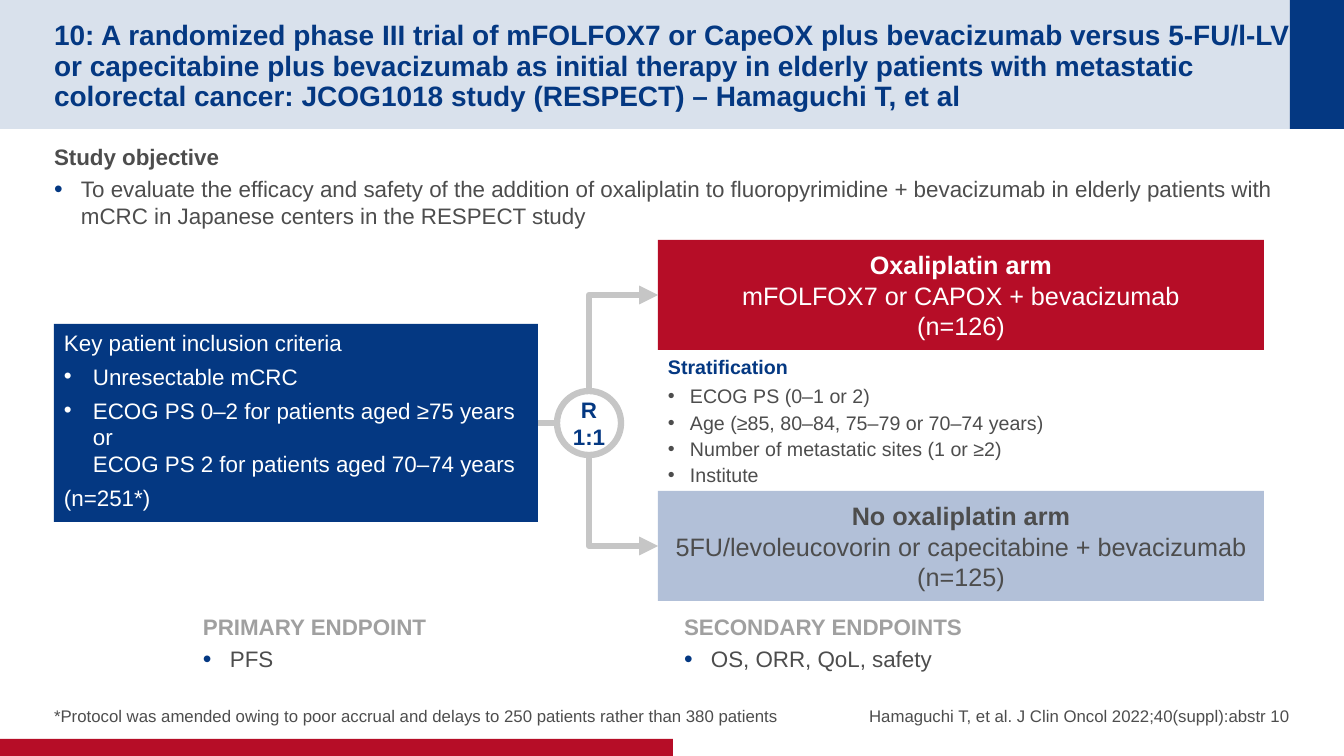
import pptx
import pptx.util
import pptx.dml.color
import pptx.enum.shapes
import pptx.enum.text
import pptx.oxml
import pptx.oxml.ns
import pptx.oxml.xmlchemy

RGBColor = pptx.dml.color.RGBColor
SHAPE = pptx.enum.shapes.MSO_SHAPE
CONNECTOR = pptx.enum.shapes.MSO_CONNECTOR
ALIGN = pptx.enum.text.PP_ALIGN
ANCHOR = pptx.enum.text.MSO_ANCHOR

NAVY = RGBColor(0x04, 0x38, 0x82)
RED = RGBColor(0xB6, 0x0D, 0x27)
PALE_BLUE = RGBColor(0xB2, 0xC0, 0xD8)
GREY = RGBColor(0x4D, 0x4D, 0x4D)
HEADING_GREY = RGBColor(0xA0, 0xA0, 0xA0)
LINE_GREY = RGBColor(0xC6, 0xC6, 0xC6)
WHITE = RGBColor(0xFF, 0xFF, 0xFF)

TITLE = (
    "10: A randomized phase III trial of mFOLFOX7 or CapeOX plus bevacizumab versus "
    "5-FU/l-LV or capecitabine plus bevacizumab as initial therapy in elderly patients "
    "with metastatic colorectal cancer: JCOG1018 study (RESPECT) – Hamaguchi T, et al"
)
OBJECTIVE = (
    "Study objective",
    "To evaluate the efficacy and safety of the addition of oxaliplatin to fluoropyrimidine "
    "+ bevacizumab in elderly patients with mCRC in Japanese centers in the RESPECT study",
)
CRITERIA = [
    ("Key patient inclusion criteria", 0),
    ("Unresectable mCRC", 29),
    ("ECOG PS 0–2 for patients aged ≥75 years or \nECOG PS 2 for patients aged 70–74 years", 29),
    ("(n=251*)", 0),
]
ARMS = [
    ("Oxaliplatin arm", "mFOLFOX7 or CAPOX + bevacizumab\n(n=126)", 240, RED, WHITE),
    ("No oxaliplatin arm", "5FU/levoleucovorin or capecitabine + bevacizumab\n(n=125)", 491, PALE_BLUE, GREY),
]
STRATIFICATION = [
    "ECOG PS (0–1 or 2)",
    "Age (≥85, 80–84, 75–79 or 70–74 years)",
    "Number of metastatic sites (1 or ≥2)",
    "Institute",
]
ENDPOINTS = [
    ("PRIMARY ENDPOINT", "PFS", (203, 608, 456, 78), 0),
    ("SECONDARY ENDPOINTS", "OS, ORR, QoL, safety", (674, 608, 490, 74), 10),
]
FOOTNOTES = [
    ("*Protocol was amended owing to poor accrual and delays to 250 patients rather than 380 patients",
     (54, 672, 735, 54), ALIGN.LEFT),
    ("Hamaguchi T, et al. J Clin Oncol 2022;40(suppl):abstr 10", (683, 672, 607, 54), ALIGN.RIGHT),
]
BANDS = [
    ((0, 0, 1344, 129), NAVY, 15),
    ((1290, 0, 54, 129), NAVY, 100),
    ((0, 739, 673, 17), RED, 100),
]
CRITERIA_BOX = (54, 324, 484, 198)
RANDOM_BOX = (557, 391, 64, 64)
ARM_LEFT, ARM_WIDTH, ARM_HEIGHT = 658, 606, 110


def px(value):
    return round(value * 12192000 / 1344)


def add_xml(parent, tag, **attributes):
    element = pptx.oxml.xmlchemy.OxmlElement(tag)
    for name, value in attributes.items():
        element.set(name, str(value))
    parent.append(element)
    return element


def write(frame, text, size=16, color=GREY, bold=False, align=ALIGN.LEFT, after=0,
          spacing=None, indent=0, bullet_color=None, bullet_size=100):
    paragraph = frame.add_paragraph() if frame.text else frame.paragraphs[0]
    paragraph.alignment = align
    paragraph.space_before = pptx.util.Pt(0)
    paragraph.space_after = pptx.util.Pt(after)
    if spacing:
        paragraph.line_spacing = spacing
    properties = paragraph._p.get_or_add_pPr()
    properties.set("marL", str(px(indent)))
    properties.set("indent", str(-px(indent)))
    if indent:
        fill = add_xml(properties, "a:buClr")
        add_xml(fill, "a:srgbClr", val=bullet_color or color)
        add_xml(properties, "a:buSzPct", val=bullet_size * 1000)
        add_xml(properties, "a:buFont", typeface="Arial")
        add_xml(properties, "a:buChar", char="•")
    else:
        add_xml(properties, "a:buNone")
    for position, line in enumerate(text.split("\n")):
        if position:
            paragraph.add_line_break()
        run = paragraph.add_run()
        run.text = line
        run.font.name = "Arial"
        run.font.size = pptx.util.Pt(size)
        run.font.bold = bold
        run.font.color.rgb = color


def set_frame(shape, margins=(10, 5, 10, 5), anchor=ANCHOR.TOP, wrap=True):
    frame = shape.text_frame
    frame.auto_size = pptx.enum.text.MSO_AUTO_SIZE.NONE
    frame.word_wrap = wrap
    frame.vertical_anchor = anchor
    frame.margin_left, frame.margin_top, frame.margin_right, frame.margin_bottom = map(px, margins)
    return frame


def place(shape, box):
    shape.left, shape.top, shape.width, shape.height = map(px, box)


def add_block(slide, kind, box, fill=None):
    shape = slide.shapes.add_shape(kind, *map(px, box))
    shape.shadow.inherit = False
    shape.line.fill.background()
    if fill is None:
        shape.fill.background()
    else:
        shape.fill.solid()
        shape.fill.fore_color.rgb = fill
    return shape


def add_line(slide, kind, start, end):
    connector = slide.shapes.add_connector(kind, *map(px, start + end))
    connector.line.color.rgb = LINE_GREY
    connector.line.width = pptx.util.Pt(4.5)
    add_xml(connector._element.spPr, "a:effectLst")
    return connector


def add_bent_arrow(slide, circle, arm, start, end):
    connector = add_line(slide, CONNECTOR.ELBOW, start, end)
    add_xml(connector.line._get_or_add_ln(), "a:tailEnd", type="triangle")
    upward = end[1] < start[1]
    connector.begin_connect(circle, 0 if upward else 2)
    connector.end_connect(arm, 1)
    if not upward:
        connector._element.xpath(".//a:stCxn")[0].set("idx", "4")
    run, rise = end[0] - start[0], abs(end[1] - start[1])
    middle_x, middle_y = (start[0] + end[0]) / 2, (start[1] + end[1]) / 2
    place(connector, (middle_x - rise / 2, middle_y - run / 2, rise, run))
    transform = connector._element.spPr.xfrm
    transform.set("rot", str((90 if upward else 270) * 60000))
    transform.set("flipH", "1")
    transform.set("flipV", "1" if upward else "0")
    connector._element.xpath(".//a:prstGeom")[0].set("prst", "bentConnector2")


def main():
    presentation = pptx.Presentation()
    presentation.slide_width, presentation.slide_height = px(1344), px(756)
    slide = presentation.slides.add_slide(presentation.slide_layouts[1])
    title, body = slide.shapes.title, slide.placeholders[1]

    for box, color, opacity in BANDS:
        band = add_block(slide, SHAPE.RECTANGLE, box, color)
        if opacity < 100:
            add_xml(band._element.xpath(".//a:solidFill/a:srgbClr")[0], "a:alpha", val=opacity * 1000)
    for placeholder in (title, body):
        slide.shapes._spTree.append(placeholder._element)

    place(title, (54, 20, 1237, 89))
    write(set_frame(title, (0, 5, 0, 0), ANCHOR.MIDDLE), TITLE, size=20, color=NAVY, bold=True, spacing=0.9)

    place(body, (54, 138, 1237, 523))
    frame = set_frame(body, (0, 5, 0, 5))
    write(frame, OBJECTIVE[0], bold=True, after=4)
    write(frame, OBJECTIVE[1], after=4, indent=27, bullet_color=NAVY, bullet_size=110)

    for text, box, align in FOOTNOTES:
        footnote = slide.shapes.add_textbox(*map(px, box))
        write(set_frame(footnote, (0, 0, 0, 0), ANCHOR.BOTTOM), text, size=12, align=align, after=4)

    for heading, text, box, margin in ENDPOINTS:
        frame = set_frame(slide.shapes.add_textbox(*map(px, box)), (margin, 5, margin, 5))
        write(frame, heading, color=HEADING_GREY, bold=True, after=4)
        write(frame, text, after=4, indent=27, bullet_color=NAVY, bullet_size=110)

    criteria = add_block(slide, SHAPE.RECTANGLE, CRITERIA_BOX, NAVY)
    frame = set_frame(criteria)
    for text, indent in CRITERIA:
        write(frame, text, color=WHITE, after=5, indent=indent)

    left, top, size, _ = RANDOM_BOX
    middle_x, middle_y = left + size / 2, top + size / 2
    circle = add_block(slide, SHAPE.OVAL, RANDOM_BOX)
    circle.line.color.rgb = LINE_GREY
    circle.line.width = pptx.util.Pt(4.5)
    frame = set_frame(circle, anchor=ANCHOR.MIDDLE, wrap=False)
    for text in ("R", "1:1"):
        write(frame, text, color=NAVY, bold=True, align=ALIGN.CENTER)

    stub = add_line(slide, CONNECTOR.STRAIGHT, (538, middle_y), (left, middle_y))
    stub.begin_connect(criteria, 3)

    for name, regimen, arm_top, fill, color in ARMS:
        arm = add_block(slide, SHAPE.RECTANGLE, (ARM_LEFT, arm_top, ARM_WIDTH, ARM_HEIGHT), fill)
        frame = set_frame(arm, (10, 0, 10, 0), ANCHOR.MIDDLE)
        write(frame, name, size=18, color=color, bold=True, align=ALIGN.CENTER)
        write(frame, regimen, size=18, color=color, align=ALIGN.CENTER)
        arm_middle = arm_top + ARM_HEIGHT / 2
        start = (middle_x, top if arm_middle < middle_y else top + size)
        add_bent_arrow(slide, circle, arm, start, (ARM_LEFT, arm_middle))

    frame = set_frame(slide.shapes.add_textbox(*map(px, (658, 350, 446, 86))))
    write(frame, "Stratification", size=14, color=NAVY, bold=True, after=4)
    for factor in STRATIFICATION:
        write(frame, factor, size=14, after=2, indent=22)

    presentation.save("out.pptx")


if __name__ == "__main__":
    main()
